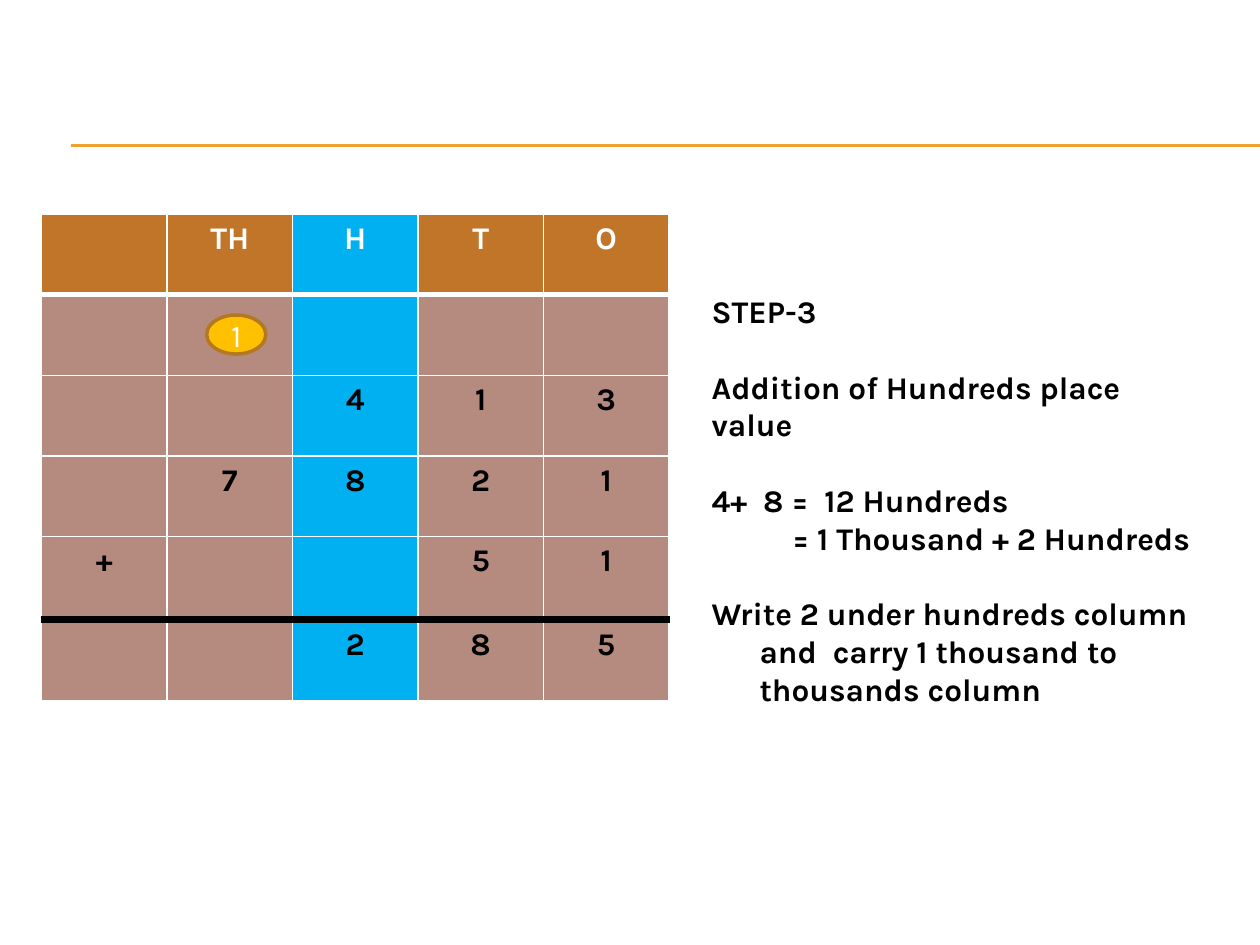
from lxml.etree import SubElement
from pptx import Presentation
from pptx.dml.color import RGBColor
from pptx.enum.shapes import MSO_CONNECTOR, MSO_SHAPE
from pptx.enum.text import MSO_ANCHOR, PP_ALIGN
from pptx.oxml.ns import qn
from pptx.util import Inches, Pt

WHITE = RGBColor(0xFF, 0xFF, 0xFF)
BLACK = RGBColor(0x00, 0x00, 0x00)
GOLD = RGBColor(0xF0, 0xA2, 0x2E)
BROWN = RGBColor(0xC1, 0x75, 0x29)
ROSE = RGBColor(0xB5, 0x8B, 0x80)
BLUE = RGBColor(0x00, 0xB0, 0xF0)
YELLOW = RGBColor(0xFF, 0xC0, 0x00)
OCHRE = RGBColor(0xB2, 0x78, 0x22)


def add_span(para, text, color, bold=True):
    span = para.add_run()
    span.text = text
    span.font.name = "Karla"
    span.font.size = Pt(18)
    span.font.bold = bold
    span.font.color.rgb = color


def add_border(cell, side, color, width):
    line = SubElement(cell._tc.get_or_add_tcPr(), qn(f"a:ln{side}"), w=str(Pt(width)))
    fill = SubElement(line, qn("a:solidFill"))
    SubElement(fill, qn("a:srgbClr"), val=str(color))


deck = Presentation()
deck.slide_width = Inches(10)
deck.slide_height = Inches(7.5)
page = deck.slides.add_slide(deck.slide_layouts[6])

for top in (1.15, 1.16):
    rule = page.shapes.add_connector(
        MSO_CONNECTOR.STRAIGHT, Inches(0.56), Inches(top), Inches(10), Inches(top)
    )
    rule.line.color.rgb = GOLD
    rule.line.width = Pt(0.75)
    SubElement(rule._element.spPr, qn("a:effectLst"))

rows = [
    ["", "TH", "H", "T", "O"],
    ["", "", "", "", ""],
    ["", "", "4", "1", "3"],
    ["", "7", "8", "2", "1"],
    ["+", "", "", "5", "1"],
    ["", "", "2", "8", "5"],
]
row_heights = [0.64, 0.64, 0.64, 0.64, 0.66, 0.64]
row_edges = [(WHITE, 1), (WHITE, 3), (WHITE, 1), (WHITE, 1), (WHITE, 1), (BLACK, 4.5), (WHITE, 1)]

table = page.shapes.add_table(
    len(rows), 5, Inches(0.33), Inches(1.7), Inches(4.98), Inches(sum(row_heights))
).table
for column in table.columns:
    column.width = Inches(4.98 / 5)
for row_index, values in enumerate(rows):
    table.rows[row_index].height = Inches(row_heights[row_index])
    for column_index, value in enumerate(values):
        cell = table.cell(row_index, column_index)
        add_border(cell, "L", WHITE, 1)
        add_border(cell, "R", WHITE, 1)
        add_border(cell, "T", *row_edges[row_index])
        add_border(cell, "B", *row_edges[row_index + 1])
        cell.fill.solid()
        if column_index == 2:
            cell.fill.fore_color.rgb = BLUE
        else:
            cell.fill.fore_color.rgb = BROWN if row_index == 0 else ROSE
        if value:
            para = cell.text_frame.paragraphs[0]
            para.alignment = PP_ALIGN.CENTER
            add_span(para, value, WHITE if row_index == 0 else BLACK)

steps = [
    ("STEP-3", 0, 0, 0),
    ("Addition of Hundreds place value", 21.5, 0, 0),
    ("4+  8 =  12 Hundreds", 21.5, 0.38, -0.38),
    ("= 1 Thousand + 2 Hundreds", 0, 0.64, 0),
    ("Write 2 under hundreds column and  carry 1 thousand to thousands column", 21.5, 0.38, -0.38),
]
box = page.shapes.add_textbox(Inches(5.55), Inches(2.27), Inches(4.06), Inches(3.13))
box.text_frame.word_wrap = True
for index, (text, gap, margin, indent) in enumerate(steps):
    para = box.text_frame.paragraphs[0] if index == 0 else box.text_frame.add_paragraph()
    para.space_before = Pt(gap)
    properties = para._p.get_or_add_pPr()
    properties.set("marL", str(Inches(margin)))
    properties.set("indent", str(Inches(indent)))
    add_span(para, text, BLACK)

carry = page.shapes.add_shape(
    MSO_SHAPE.OVAL, Inches(1.64), Inches(2.5), Inches(0.47), Inches(0.31)
)
carry.shadow.inherit = False
carry.fill.solid()
carry.fill.fore_color.rgb = YELLOW
carry.line.color.rgb = OCHRE
carry.line.width = Pt(2)
carry.text_frame.vertical_anchor = MSO_ANCHOR.MIDDLE
para = carry.text_frame.paragraphs[0]
para.alignment = PP_ALIGN.CENTER
add_span(para, "1", WHITE, bold=False)

deck.save("out.pptx")
